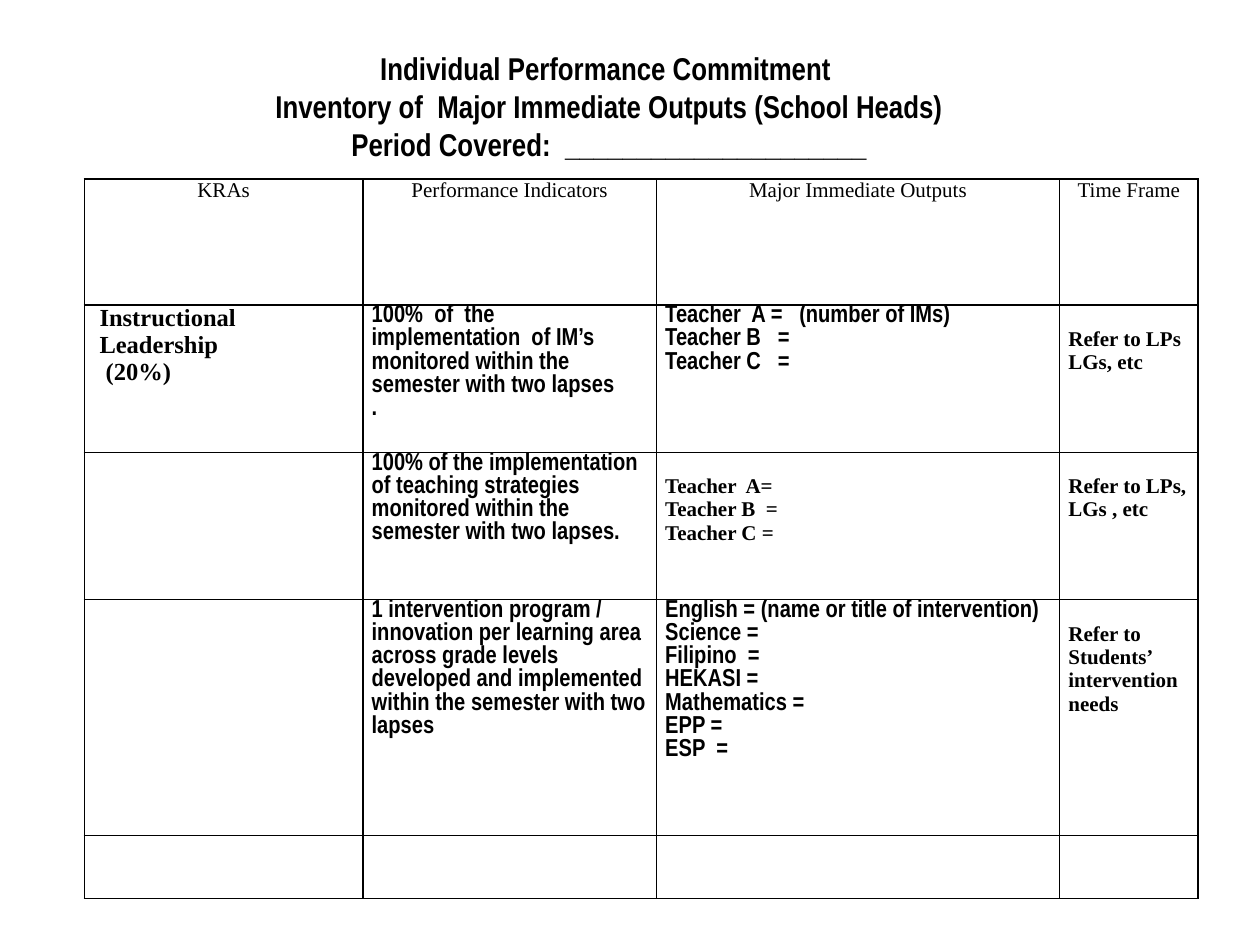
from lxml import etree
from pptx import Presentation
from pptx.dml.color import RGBColor
from pptx.enum.text import MSO_ANCHOR, PP_ALIGN
from pptx.oxml.ns import qn
from pptx.util import Inches, Pt

CENTER, LEFT, TOP = PP_ALIGN.CENTER, PP_ALIGN.LEFT, MSO_ANCHOR.TOP
COLORS = {"ink": "000000"}
NARROW, SERIF = "Arial Narrow", "Times New Roman"

TITLE = [
    "Individual Performance Commitment ",
    "Inventory of  Major Immediate Outputs (School Heads)",
    "Period Covered:  _____________________",
]
STYLES = {
    "head": dict(font=SERIF, size=12, bold=False, align=CENTER),
    "area": dict(font=SERIF, size=14),
    "body": dict(font=NARROW, size=14),
    "note": dict(font=SERIF, size=12),
}
MARGINS_LEFT = {"area": 0.12}
MARGINS_TOP = {"note": 0.18}
COL_WIDTHS = [2.21, 2.33, 3.2, 1.1]
ROW_HEIGHTS = [1, 1.17, 1.17, 1.87, 0.5]
ROWS = [
    [("head", [text]) for text in
     ("KRAs", "Performance Indicators", "Major Immediate Outputs", "Time Frame")],
    [("area", ["Instructional", "Leadership", " (20%)"]),
     ("body", ["100%  of  the implementation  of IM’s monitored within the "
               "semester with two lapses", "."]),
     ("body", ["Teacher  A =   (number of IMs)", "Teacher B   =", "Teacher C   ="]),
     ("note", ["Refer to LPs", "LGs, etc"])],
    [("area", []),
     ("body", ["100% of the implementation of teaching strategies monitored "
               "within the semester with two lapses."]),
     ("note", ["Teacher  A=", "Teacher B  =", "Teacher C ="]),
     ("note", ["Refer to LPs, LGs , etc"])],
    [("area", []),
     ("body", ["1 intervention program / innovation per learning area across grade "
               "levels developed and implemented within the semester with two lapses"]),
     ("body", ["English = (name or title of intervention)", "Science =", "Filipino  =",
               "HEKASI =", "Mathematics =", "EPP =", "ESP  ="]),
     ("note", ["Refer to Students’ intervention needs"])],
    [("area", [])] * 4,
]


def write_text(tf, lines, font, size, bold=True, align=LEFT):
    """Write each line as a paragraph in one format."""
    for i, line in enumerate(lines):
        p = tf.paragraphs[0] if i == 0 else tf.add_paragraph()
        p.alignment = align
        r = p.add_run()
        r.text = line
        r.font.name, r.font.size, r.font.bold = font, Pt(size), bold
        r.font.color.rgb = RGBColor.from_string(COLORS["ink"])


def set_borders(cell, color, width):
    """Draw a solid line on all four sides of a cell."""
    tc_pr = cell._tc.get_or_add_tcPr()
    for i, side in enumerate(("a:lnL", "a:lnR", "a:lnT", "a:lnB")):
        ln = etree.Element(qn(side), w=str(Pt(width)))
        fill = etree.SubElement(ln, qn("a:solidFill"))
        etree.SubElement(fill, qn("a:srgbClr"), val=color)
        tc_pr.insert(i, ln)


def add_title(slide, left, top, width, height):
    """Add the centred three-line heading."""
    sp = slide.shapes.add_textbox(Inches(left), Inches(top), Inches(width), Inches(height))
    tf = sp.text_frame
    tf.word_wrap = True
    tf.vertical_anchor = TOP
    write_text(tf, TITLE, font=NARROW, size=18, align=CENTER)


def add_outputs_table(slide, left, top):
    """Add the ruled table of outputs."""
    frame = slide.shapes.add_table(
        len(ROWS), len(COL_WIDTHS), Inches(left), Inches(top),
        Inches(sum(COL_WIDTHS)), Inches(sum(ROW_HEIGHTS)))
    table = frame.table
    table.first_row = table.horz_banding = False
    for col, width in zip(table.columns, COL_WIDTHS):
        col.width = Inches(width)
    for row, height, cells in zip(table.rows, ROW_HEIGHTS, ROWS):
        row.height = Inches(height)
        for cell, (style, lines) in zip(row.cells, cells):
            cell.margin_left = Inches(MARGINS_LEFT.get(style, 0.07))
            cell.margin_right = Inches(0.07)
            cell.margin_top = Inches(MARGINS_TOP.get(style, 0))
            cell.margin_bottom = 0
            cell.fill.background()
            set_borders(cell, COLORS["ink"], 1)
            write_text(cell.text_frame, lines, **STYLES[style])


def main():
    """Build the slide and save it."""
    prs = Presentation()
    prs.slide_width, prs.slide_height = Inches(10), Inches(7.5)
    slide = prs.slides.add_slide(prs.slide_layouts[6])
    add_outputs_table(slide, 0.67, 1.42)
    add_title(slide, 1.25, 0.34, 7.17, 1.31)
    prs.save("out.pptx")


if __name__ == "__main__":
    main()
